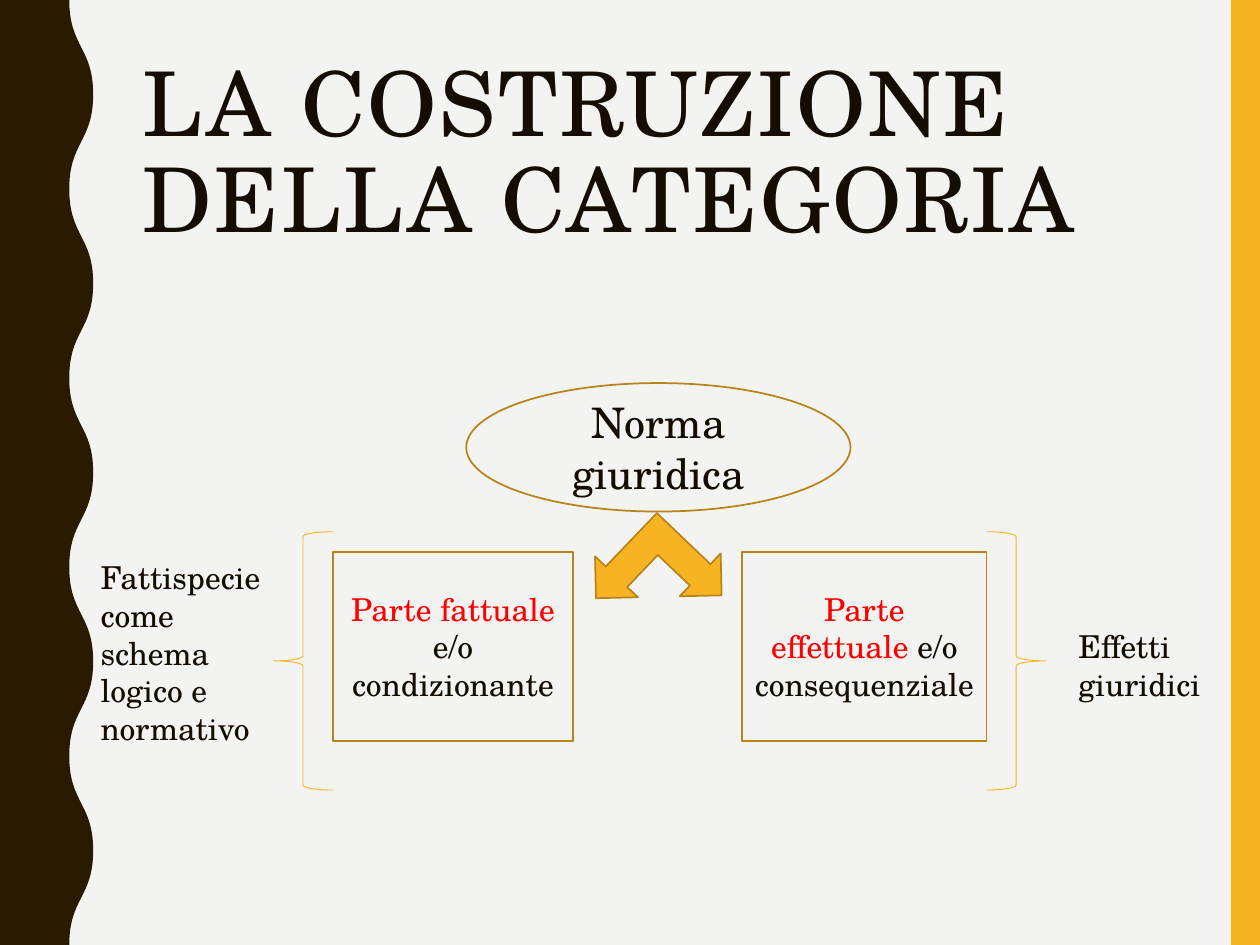
"""Builds a slide on how a legal category is constructed."""
from dataclasses import dataclass

import pptx
import pptx.dml.color
import pptx.enum.shapes
import pptx.enum.text
import pptx.oxml.ns
import pptx.util

Inches = pptx.util.Inches
Pt = pptx.util.Pt
Shape = pptx.enum.shapes.MSO_SHAPE
Align = pptx.enum.text.PP_ALIGN
Anchor = pptx.enum.text.MSO_ANCHOR


def rgb(code):
    """Return the colour of a hex code."""
    return pptx.dml.color.RGBColor.from_string(code)


@dataclass(frozen=True)
class Theme:
    """Colours, font and sizes of the slide."""
    paper: str = "F3F3F2"
    ink: str = "150D00"
    wave: str = "2A1A00"
    gold: str = "F8B323"
    outline: str = "B7841A"
    accent: str = "FF0000"
    font: str = "TeX Gyre Schola"
    title: int = 51
    heading: int = 24
    body: int = 18


THEME = Theme()


def add_form(slide, preset, box, fill=None, line=None, weight=1):
    """Add a preset shape with the given fill and outline."""
    form = slide.shapes.add_shape(preset, *map(Inches, box))
    form.shadow.inherit = False
    if fill:
        form.fill.solid()
        form.fill.fore_color.rgb = rgb(fill)
    else:
        form.fill.background()
    if line:
        form.line.color.rgb = rgb(line)
        form.line.width = Pt(weight)
    else:
        form.line.fill.background()
    return form


def write(frame, pieces, size, align=Align.LEFT, anchor=Anchor.TOP):
    """Write one paragraph made of (text, colour) pieces."""
    frame.word_wrap = True
    frame.vertical_anchor = anchor
    paragraph = frame.paragraphs[0]
    paragraph.alignment = align
    paragraph.font.name = THEME.font
    paragraph.font.size = Pt(size)
    for text, color in pieces:
        run = paragraph.add_run()
        run.text = text
        run.font.color.rgb = rgb(color)
    return paragraph


def add_label(slide, box, text, size=THEME.body):
    """Add a plain text box and return its paragraph."""
    label = slide.shapes.add_textbox(*map(Inches, box))
    return write(label.text_frame, [(text, THEME.ink)], size)


def add_node(slide, preset, box, pieces, size=THEME.body):
    """Add an outlined shape with centred text."""
    node = add_form(slide, preset, box, THEME.paper, THEME.outline)
    write(node.text_frame, pieces, size, Align.CENTER, Anchor.MIDDLE)


def bend(form, count):
    """Turn the first count triples of line segments into cubic curves."""
    segments = list(form._element.iter(pptx.oxml.ns.qn("a:lnTo")))
    for index in range(0, 3 * count, 3):
        curve, *others = segments[index:index + 3]
        curve.tag = pptx.oxml.ns.qn("a:cubicBezTo")
        for other in others:
            curve.append(other[0])
            other.getparent().remove(other)


def add_wave(slide, box, trough=0.55, waves=5):
    """Add the dark band whose right edge swings between trough and box width."""
    left, top, width, height = box
    half = height / (2 * waves)
    points = []
    for index in range(2 * waves):
        start, end = (trough, width) if index % 2 == 0 else (width, trough)
        points += [(left + x, top + half * (index + share))
                   for x, share in ((start, 0.5), (end, 0.5), (end, 1))]
    points += [(left, top + height), (left, top)]
    outline = slide.shapes.build_freeform(Inches(left + trough), Inches(top))
    outline.add_line_segments([(Inches(x), Inches(y)) for x, y in points])
    band = outline.convert_to_shape()
    bend(band, 2 * waves)
    band.shadow.inherit = False
    band.fill.solid()
    band.fill.fore_color.rgb = rgb(THEME.wave)
    band.line.fill.background()


def add_title(slide, box, text):
    """Add the spaced-out title."""
    title = add_label(slide, box, text, THEME.title)
    title.line_spacing = 0.9
    title.runs[0].font._element.set("spc", "150")


def add_norm(slide, box):
    """Add the norm's ellipse with the forked arrow beneath it."""
    left, top, width, _ = box
    add_node(slide, Shape.OVAL, box, [("Norma giuridica", THEME.ink)], THEME.heading)
    side = 0.94
    fork = add_form(slide, Shape.LEFT_UP_ARROW,
                    (left + (width - side) / 2, top + 1.06, side, side),
                    THEME.gold, THEME.outline)
    fork.rotation = 223.7


def add_part(slide, box, key, rest, brace, opens_left):
    """Add one part of the norm with a brace on its outer side."""
    left, top, width, _ = box
    add_node(slide, Shape.RECTANGLE, box, [(key, THEME.accent), (rest, THEME.ink)])
    depth = 0.47
    brace_left = left - depth if opens_left else left + width
    add_form(slide, brace, (brace_left, top - 0.16, depth, 2.05),
             line=THEME.gold, weight=0.5)


def main():
    """Build and save the slide."""
    deck = pptx.Presentation()
    deck.slide_width, deck.slide_height = Inches(10), Inches(7.5)
    slide = deck.slides.add_slide(deck.slide_layouts[6])
    slide.background.fill.solid()
    slide.background.fill.fore_color.rgb = rgb(THEME.paper)

    add_form(slide, Shape.RECTANGLE, (9.77, 0, 0.23, 7.5), THEME.gold)
    add_wave(slide, (0, 0, 0.74, 7.5))
    add_title(slide, (1.03, 0.42, 8.35, 1.63), "LA COSTRUZIONE DELLA CATEGORIA")
    add_norm(slide, (3.7, 3.04, 3.05, 1.02))
    add_part(slide, (5.89, 4.38, 1.94, 1.5), "Parte effettuale",
             " e/o consequenziale", Shape.RIGHT_BRACE, False)
    add_part(slide, (2.64, 4.38, 1.91, 1.5), "Parte fattuale",
             " e/o condizionante", Shape.LEFT_BRACE, True)
    add_label(slide, (8.46, 4.93, 1.18, 0.71), "Effetti giuridici")
    add_label(slide, (0.7, 4.38, 1.5, 1.62), "Fattispecie come schema logico e normativo")
    deck.save("out.pptx")


if __name__ == "__main__":
    main()
